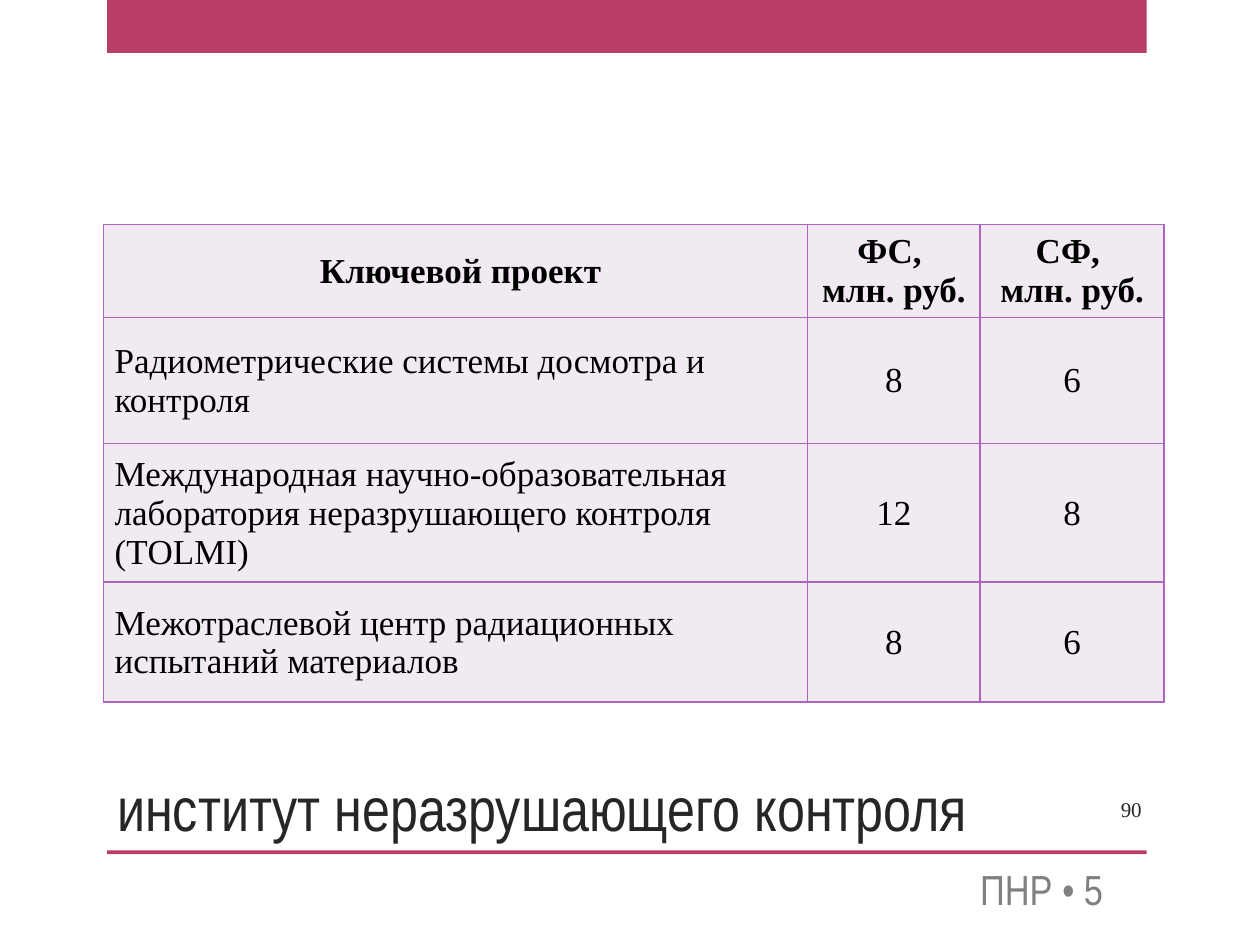
from dataclasses import dataclass

from lxml import etree
from pptx import Presentation
from pptx import util as u
from pptx.dml.color import RGBColor
from pptx.enum import shapes, text
from pptx.oxml import ns


@dataclass(frozen=True)
class Theme:
    accent: str = "B83D68"
    ink: str = "262626"
    muted: str = "808080"
    table_ink: str = "000000"
    table_fill: str = "F1EAF3"
    table_line: str = "AC66BB"
    display: str = "Arial Narrow"
    body: str = "Times New Roman"
    title_size: int = 35
    footer_size: int = 24
    table_size: int = 20
    number_size: int = 12


THEME = Theme()
WIDTH, HEIGHT = 10, 7.5
LEFT, CONTENT_WIDTH = 0.085 * WIDTH, 0.825 * WIDTH
RULE_TOP = 0.9 * HEIGHT

COLUMNS = (5.59, 1.37, 1.46)
ROWS = (0.74, 1, 1.1, 0.95)
PROJECTS = (
    ("Ключевой проект", "ФС, \nмлн. руб.", "СФ, \nмлн. руб."),
    ("Радиометрические системы досмотра и контроля", "8", "6"),
    ("Международная научно-образовательная лаборатория "
     "неразрушающего контроля (ТOLMI)", "12", "8"),
    ("Межотраслевой центр радиационных испытаний материалов", "8", "6"),
)


def inches(*lengths):
    return [u.Inches(length) for length in lengths]


def write(frame, words, font, size, color, align, bold=False):
    frame.text = words
    for para in frame.paragraphs:
        para.alignment = align
        for span in para.runs:
            span.font.name = font
            span.font.size = u.Pt(size)
            span.font.bold = bold
            span.font.color.rgb = RGBColor.from_string(color)


def add_bar(page, top, height):
    bar = page.shapes.add_shape(
        shapes.MSO_SHAPE.RECTANGLE, *inches(LEFT, top, CONTENT_WIDTH, height))
    bar.shadow.inherit = False
    bar.fill.solid()
    bar.fill.fore_color.rgb = RGBColor.from_string(THEME.accent)
    bar.line.fill.background()


def set_title(page, words):
    title = page.shapes.title
    title.left, title.top, title.width, title.height = inches(
        0.83, RULE_TOP - 0.87, 8.34, 0.87)
    frame = title.text_frame
    frame.auto_size = text.MSO_AUTO_SIZE.NONE
    frame.vertical_anchor = text.MSO_ANCHOR.BOTTOM
    write(frame, words, THEME.display, THEME.title_size, THEME.ink,
          text.PP_ALIGN.LEFT)


def add_label(page, place, words, *style):
    frame = page.shapes.add_textbox(*inches(*place)).text_frame
    frame.word_wrap = True
    frame.vertical_anchor = text.MSO_ANCHOR.MIDDLE
    write(frame, words, *style)


def set_borders(cell):
    properties = cell._tc.get_or_add_tcPr()
    for side in ("a:lnL", "a:lnR", "a:lnT", "a:lnB"):
        line = etree.SubElement(properties, ns.qn(side), w=str(u.Pt(1)))
        fill = etree.SubElement(line, ns.qn("a:solidFill"))
        etree.SubElement(fill, ns.qn("a:srgbClr"), val=THEME.table_line)


def fill_cell(cell, words, is_header, is_name):
    set_borders(cell)
    cell.fill.solid()
    cell.fill.fore_color.rgb = RGBColor.from_string(THEME.table_fill)
    cell.vertical_anchor = text.MSO_ANCHOR.MIDDLE
    (cell.margin_left, cell.margin_top, cell.margin_right,
     cell.margin_bottom) = inches(0.09 if is_name else 0.01, 0.01, 0.01, 0)
    align = (text.PP_ALIGN.LEFT if is_name and not is_header
             else text.PP_ALIGN.CENTER)
    write(cell.text_frame, words, THEME.body, THEME.table_size,
          THEME.table_ink, align, is_header)


def add_project_table(page):
    table = page.shapes.add_table(
        len(ROWS), len(COLUMNS),
        *inches(0.82, 1.78, sum(COLUMNS), sum(ROWS))).table
    table.first_row = table.horz_banding = False
    for column, width in zip(table.columns, COLUMNS):
        column.width = u.Inches(width)
    for row, height in zip(table.rows, ROWS):
        row.height = u.Inches(height)
    for i, project in enumerate(PROJECTS):
        for j, words in enumerate(project):
            fill_cell(table.cell(i, j), words, i == 0, j == 0)


def main():
    deck = Presentation()
    deck.slide_width, deck.slide_height = inches(WIDTH, HEIGHT)
    page = deck.slides.add_slide(deck.slide_layouts[5])
    add_bar(page, 0, 0.42)
    add_bar(page, RULE_TOP, 0.03)
    add_label(page, (8.33, 6.22, 0.83, 0.4), "90", THEME.body,
              THEME.number_size, THEME.ink, text.PP_ALIGN.RIGHT)
    set_title(page, "институт неразрушающего контроля")
    add_label(page, (7.68, 6.81, 1.42, 0.49), "ПНР • 5", THEME.display,
              THEME.footer_size, THEME.muted, text.PP_ALIGN.LEFT)
    add_project_table(page)
    deck.save("out.pptx")


if __name__ == "__main__":
    main()
